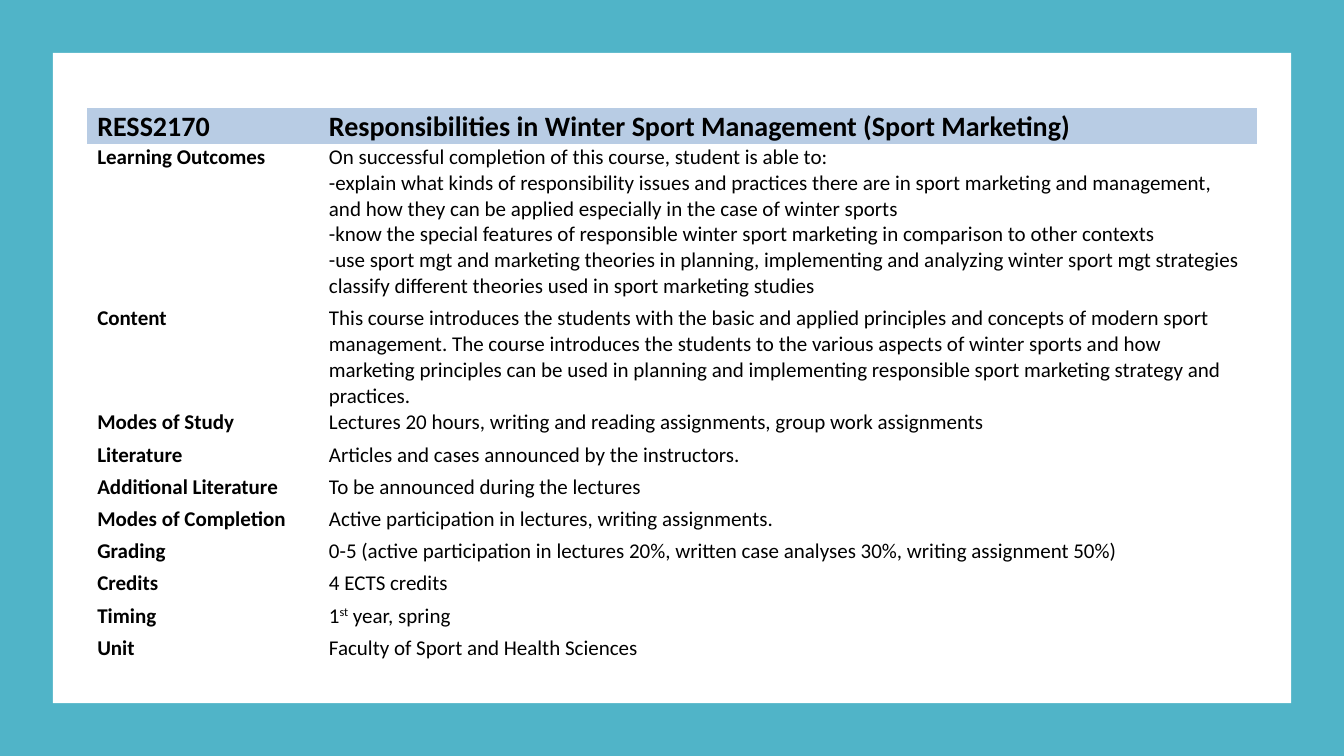
from dataclasses import dataclass

from pptx import Presentation
from pptx.dml.color import RGBColor
from pptx.enum.shapes import MSO_SHAPE
from pptx.oxml.ns import qn
from pptx.util import Inches, Pt

RECTANGLE = MSO_SHAPE.RECTANGLE
PLAIN_TABLE_STYLE = "{2D5ABB26-0587-4C30-8999-92F81FD0307C}"
SLIDE_WIDTH, SLIDE_HEIGHT = 13.33, 7.5


@dataclass(frozen=True)
class Theme:
    frame: str = "50B4C8"
    panel: str = "FFFFFF"
    header: str = "B8CCE4"
    text: str = "000000"
    font: str = "Calibri"
    header_size: int = 20
    body_size: int = 15


THEME = Theme()
CELL_MARGINS = {
    "margin_left": Inches(0.1),
    "margin_right": Inches(0.1),
    "margin_top": Inches(0.01),
    "margin_bottom": 0,
}
LABEL_SHARE = 2.3 / 11.61
ROW_HEIGHT = 0.32
TALL_ROWS = {"Learning Outcomes": 1.6, "Content": 0.83}
INTRO_INDENT, OUTCOME_INDENT = 0.5, 0.38

COURSE = [
    ("RESS2170", ["Responsibilities in Winter Sport Management (Sport Marketing)"]),
    ("Learning Outcomes", [
        "On successful completion of this course, student is able to:",
        "-explain what kinds of responsibility issues and practices there are in sport marketing and management,",
        "and how they can be applied especially in the case of winter sports",
        "-know the special features of responsible winter sport marketing in comparison to other contexts",
        "-use sport mgt and marketing theories in planning, implementing and analyzing winter sport mgt strategies",
        "classify different theories used in sport marketing studies",
    ]),
    ("Content", [
        "This course introduces the students with the basic and applied principles and concepts of modern sport "
        "management. The course introduces the students to the various aspects of winter sports and how marketing "
        "principles can be used in planning and implementing responsible sport marketing strategy and practices."
    ]),
    ("Modes of Study", ["Lectures 20 hours, writing and reading assignments, group work assignments"]),
    ("Literature", ["Articles and cases announced by the instructors."]),
    ("Additional Literature", ["To be announced during the lectures"]),
    ("Modes of Completion", ["Active participation in lectures, writing assignments."]),
    ("Grading", ["0-5 (active participation in lectures 20%, written case analyses 30%, writing assignment 50%)"]),
    ("Credits", ["4 ECTS credits"]),
    ("Timing", ["1^st^ year, spring"]),
    ("Unit", ["Faculty of Sport and Health Sciences"]),
]


def set_attributes(target, values):
    for name, value in values.items():
        setattr(target, name, value)


def add_panel(slide, box, color):
    panel = slide.shapes.add_shape(RECTANGLE, *map(Inches, box))
    panel.shadow.inherit = False
    panel.fill.solid()
    panel.fill.fore_color.rgb = RGBColor.from_string(color)
    panel.line.fill.background()


def add_text(paragraph, text, size, bold):
    for position, part in enumerate(text.split("^")):
        run = paragraph.add_run()
        run.text = part
        set_attributes(run.font, {"name": THEME.font, "size": Pt(size), "bold": bold})
        run.font.color.rgb = RGBColor.from_string(THEME.text)
        if position % 2:
            run.font._element.set("baseline", "30000")


def hang(paragraph, indent):
    properties = paragraph._p.get_or_add_pPr()
    properties.set("marL", str(Inches(indent)))
    properties.set("indent", str(-Inches(indent)))


def fill_cell(cell, lines, is_header, bold):
    set_attributes(cell, CELL_MARGINS)
    if is_header:
        cell.fill.solid()
        cell.fill.fore_color.rgb = RGBColor.from_string(THEME.header)
    else:
        cell.fill.background()
    size = THEME.header_size if is_header else THEME.body_size
    frame = cell.text_frame
    for position, line in enumerate(lines):
        paragraph = frame.add_paragraph() if position else frame.paragraphs[0]
        add_text(paragraph, line, size, bold)
        if len(lines) > 1:
            hang(paragraph, OUTCOME_INDENT if position else INTRO_INDENT)


def add_course_table(slide, box, course):
    left, top, width = box
    heights = [TALL_ROWS.get(label, ROW_HEIGHT) for label, _ in course]
    table = slide.shapes.add_table(
        len(course), 2, *map(Inches, (left, top, width, sum(heights)))
    ).table
    set_attributes(table, {"first_row": False, "horz_banding": False})
    table._tbl.tblPr.find(qn("a:tableStyleId")).text = PLAIN_TABLE_STYLE
    for column, share in zip(table.columns, (LABEL_SHARE, 1 - LABEL_SHARE)):
        column.width = Inches(width * share)
    for index, (label, lines) in enumerate(course):
        is_header = index == 0
        table.rows[index].height = Inches(heights[index])
        fill_cell(table.cell(index, 0), [label], is_header, True)
        fill_cell(table.cell(index, 1), lines, is_header, is_header)


def add_course_slide(presentation, course):
    slide = presentation.slides.add_slide(presentation.slide_layouts[6])
    margin = 0.07 * SLIDE_HEIGHT
    panel_width, panel_height = SLIDE_WIDTH - 2 * margin, SLIDE_HEIGHT - 2 * margin
    add_panel(slide, (0, 0, SLIDE_WIDTH, SLIDE_HEIGHT), THEME.frame)
    add_panel(slide, (margin, margin, panel_width, panel_height), THEME.panel)
    inset = 0.34
    add_course_table(slide, (margin + inset, margin + 0.55, panel_width - 2 * inset), course)


def main():
    presentation = Presentation()
    set_attributes(presentation, {
        "slide_width": Inches(SLIDE_WIDTH),
        "slide_height": Inches(SLIDE_HEIGHT),
    })
    add_course_slide(presentation, COURSE)
    presentation.save("out.pptx")


if __name__ == "__main__":
    main()
